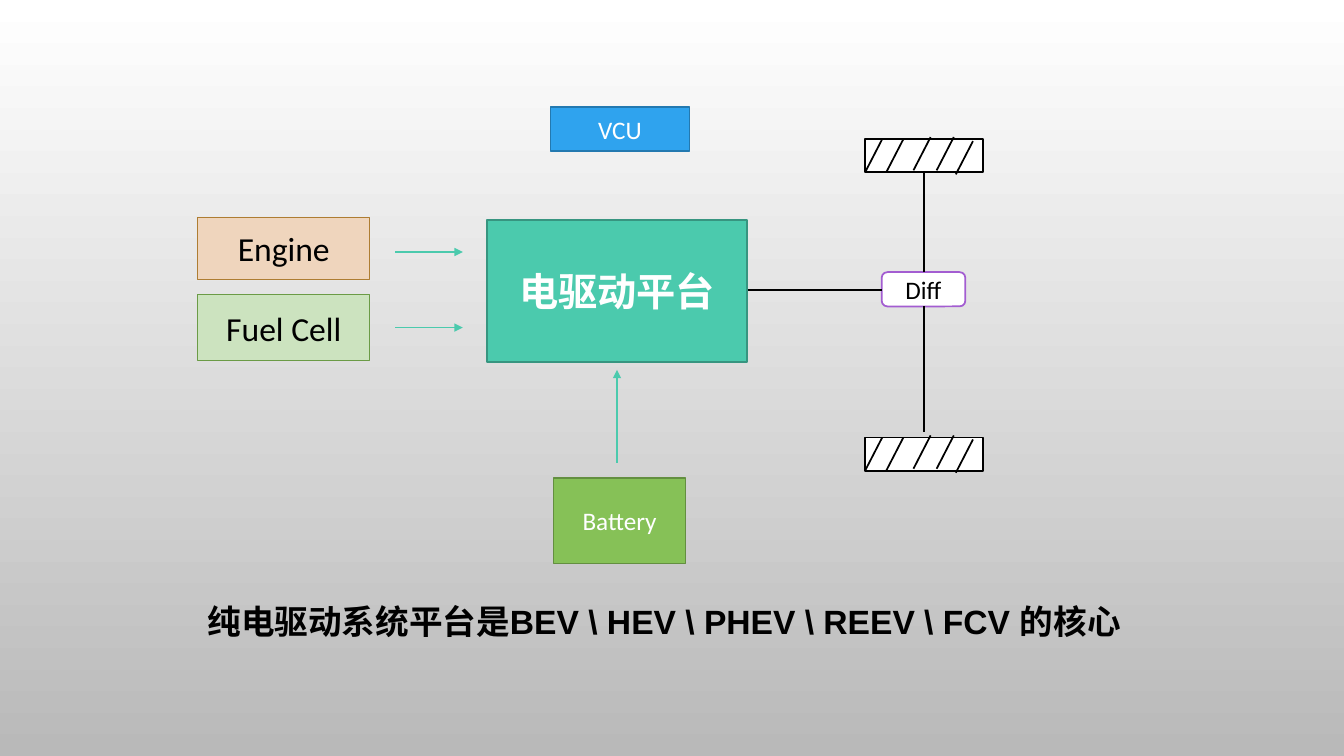
from dataclasses import dataclass
from pptx import Presentation, util as u
from pptx.dml.color import RGBColor
from pptx.enum import shapes, text
from pptx.oxml.ns import qn
from lxml import etree


@dataclass(frozen=True)
class Theme:
    top: str = "FFFFFF"
    base: str = "B9B9B9"
    white: str = "FFFFFF"
    black: str = "000000"
    teal: str = "4BCAAD"
    drive: tuple = ("4BCAAD", "379580")
    vcu: tuple = ("2FA3EE", "2379B0")
    cell: tuple = ("86C157", "638F40")
    engine: tuple = ("EFD5BD", "AE7D32")
    fuel: tuple = ("CCE3BF", "6B9B46")
    diff: tuple = ("FFFFFF", "A35DD1")
    wheel: tuple = ("FFFFFF", "000000")
    thin: float = 0.75
    line: float = 1.25
    small: int = 18
    mid: int = 24
    big: int = 28
    body: str = "Calibri"
    note: str = "Arial"


T = Theme()
RECT = shapes.MSO_SHAPE.RECTANGLE
ROUND = shapes.MSO_SHAPE.ROUNDED_RECTANGLE


def rgb(code):
    return RGBColor.from_string(code)


def write(frame, words, size, color, font, bold=False):
    frame.text = words
    face = frame.paragraphs[0].runs[0].font
    face.name, face.size, face.bold = font, u.Pt(size), bold
    face.color.rgb = rgb(color)


def block(slide, box, paint, words="", size=T.small, color=T.white,
          bold=False, width=T.line, kind=RECT):
    item = slide.shapes.add_shape(kind, *map(u.Inches, box))
    item.shadow.inherit = False
    item.fill.solid()
    item.fill.fore_color.rgb = rgb(paint[0])
    item.line.color.rgb = rgb(paint[1])
    item.line.width = u.Pt(width)
    if words:
        frame = item.text_frame
        frame.word_wrap = True
        frame.vertical_anchor = text.MSO_ANCHOR.MIDDLE
        write(frame, words, size, color, T.body, bold)
        frame.paragraphs[0].alignment = text.PP_ALIGN.CENTER


def link(slide, start, end, color=T.black, arrow=False):
    item = slide.shapes.add_connector(
        shapes.MSO_CONNECTOR.STRAIGHT, *map(u.Inches, (*start, *end)))
    item.line.color.rgb = rgb(color)
    item.line.width = u.Pt(T.line)
    if arrow:
        line = item.line._get_or_add_ln()
        etree.SubElement(line, qn("a:tailEnd"), type="triangle")
    etree.SubElement(item._element.spPr, qn("a:effectLst"))


def backdrop(slide):
    fill = slide.background.fill
    fill.gradient()
    fill.gradient_angle = 270
    for stop, code in zip(fill.gradient_stops, (T.top, T.base)):
        stop.color.rgb = rgb(code)


def sources(slide, box):
    """Engine and fuel cell, each with an arrow to the platform."""
    left, top, wide, _ = box
    block(slide, (left, top, wide, 0.61), T.engine, "Engine",
          T.mid, T.black, width=T.thin)
    block(slide, (left, top + 0.76, wide, 0.66), T.fuel, "Fuel Cell",
          T.mid, T.black, width=T.thin)
    start = left + wide + 0.25
    for y in (top + 0.34, top + 1.09):
        link(slide, (start, y), (start + 0.67, y), T.teal, True)


def platform(slide, box):
    """Drive platform with the VCU above and the battery below."""
    left, top, wide, high = box
    mid = left + wide / 2
    block(slide, box, T.drive, "电驱动平台", T.big, bold=True)
    block(slide, (mid - 0.66, top - 1.12, 1.38, 0.44), T.vcu, "VCU")
    block(slide, (mid - 0.63, top + 2.56, 1.31, 0.85), T.cell, "Battery")
    foot = top + high + 0.08
    link(slide, (mid, foot + 0.92), (mid, foot), T.teal, True)


def wheel(slide, box):
    """Hatched wheel: (offset from left, rise above the top edge)."""
    left, top, _, high = box
    block(slide, box, T.wheel)
    for dx, rise in ((0, 0), (0.21, 0), (0.48, 0.02), (0.71, 0.02), (0.9, -0.02)):
        link(slide, (left + dx, top + high - rise), (left + dx + 0.17, top - rise))


def axle(slide, box):
    """Two wheels joined through the differential, driven from the left."""
    left, top, wide, high = box
    mid, tall = left + wide / 2, 0.33
    hub, deep = top + 1.32, 0.34
    for y in (top, top + high - tall):
        wheel(slide, (left, y, wide, tall))
    block(slide, (mid - 0.42, hub, 0.83, deep), T.diff, "Diff",
          color=T.black, kind=ROUND)
    link(slide, (mid, hub), (mid, top + tall))
    link(slide, (mid, hub + deep), (mid, top + high - tall - 0.05))
    link(slide, (mid - 1.75, 2.88), (mid - 0.42, 2.88))


def caption(slide, box):
    frame = slide.shapes.add_textbox(*map(u.Inches, box)).text_frame
    frame.word_wrap = True
    write(frame, "纯电驱动系统平台是BEV \\ HEV \\ PHEV \\ REEV \\ FCV 的核心",
          T.mid, T.black, T.note, True)


def main():
    deck = Presentation()
    deck.slide_width, deck.slide_height = u.Inches(13.33), u.Inches(7.5)
    slide = deck.slides.add_slide(deck.slide_layouts[6])
    backdrop(slide)
    platform(slide, (4.83, 2.18, 2.58, 1.41))
    sources(slide, (1.96, 2.16, 1.71, 1.42))
    axle(slide, (8.58, 1.38, 1.17, 3.29))
    caption(slide, (1.96, 5.91, 9.54, 0.5))
    deck.save("out.pptx")


if __name__ == "__main__":
    main()
